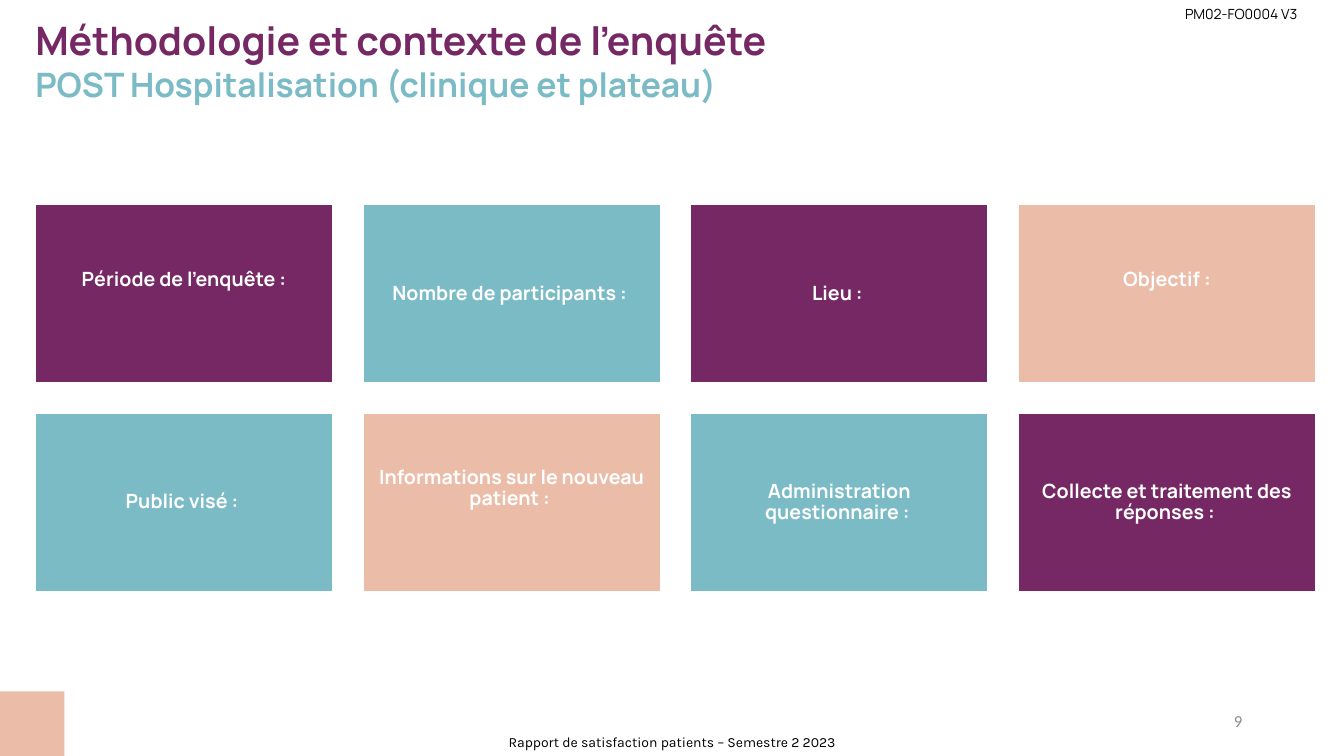
from pptx import Presentation
from pptx.dml.color import RGBColor
from pptx.enum.shapes import MSO_SHAPE
from pptx.enum.text import MSO_ANCHOR, PP_ALIGN
from pptx.util import Inches, Pt

RECT = MSO_SHAPE.RECTANGLE
TOP, MIDDLE = MSO_ANCHOR.TOP, MSO_ANCHOR.MIDDLE
LEFT, CENTER, RIGHT = PP_ALIGN.LEFT, PP_ALIGN.CENTER, PP_ALIGN.RIGHT

PURPLE, TEAL, PEACH = "752864", "7BBBC6", "EBBDA9"
WHITE, BLACK, GREY = "FFFFFF", "000000", "8C8C8C"

CARD_W, CARD_H, GAP = 2.95, 1.77, 0.3
CARDS_LEFT, CARDS_TOP, COLUMNS = 0.35, 2.03, 4
CARD_INSET, RAISED_INSET = 0.06, 0.34

CARDS = [
    ("Période de l’enquête :", PURPLE, True),
    ("Nombre de participants : ", TEAL, False),
    ("Lieu : ", PURPLE, False),
    ("Objectif :", PEACH, True),
    ("Public visé : ", TEAL, False),
    ("Informations sur le nouveau patient : ", PEACH, True),
    ("Administration questionnaire : ", TEAL, False),
    ("Collecte et traitement des réponses : ", PURPLE, False),
]


def color(value):
    return RGBColor.from_string(value)


def set_insets(tf, left, top, right, bottom):
    tf.margin_left, tf.margin_top = Inches(left), Inches(top)
    tf.margin_right, tf.margin_bottom = Inches(right), Inches(bottom)


def add_run(p, text, size, font, fill, bold=False):
    r = p.add_run()
    r.text = text
    r.font.size = Pt(size)
    r.font.name = font
    r.font.bold = bold
    r.font.color.rgb = color(fill)


def add_box(s, x, y, w, h, fill):
    sp = s.shapes.add_shape(RECT, Inches(x), Inches(y), Inches(w), Inches(h))
    sp.shadow.inherit = False
    sp.fill.solid()
    sp.fill.fore_color.rgb = color(fill)
    sp.line.fill.background()
    return sp


def add_text(s, x, y, w, h, align, anchor=TOP):
    sp = s.shapes.add_textbox(Inches(x), Inches(y), Inches(w), Inches(h))
    tf = sp.text_frame
    tf.word_wrap = True
    tf.vertical_anchor = anchor
    tf.paragraphs[0].alignment = align
    return tf


def add_title(s):
    tf = add_text(s, 0.35, 0.16, 12.69, 0.88, LEFT, MIDDLE)
    set_insets(tf, 0, 0, 0, 0)
    add_run(tf.paragraphs[0], "Méthodologie et contexte de l’enquête", 28, "Manrope", PURPLE, True)
    add_run(tf.add_paragraph(), "POST Hospitalisation (clinique et plateau)", 24, "Manrope", TEAL, True)


def add_card(s, index, text, fill, raised):
    row, column = divmod(index, COLUMNS)
    x = CARDS_LEFT + column * (CARD_W + GAP)
    y = CARDS_TOP + row * (CARD_H + GAP)
    sp = add_box(s, x, y, CARD_W, CARD_H, fill)
    sp.line.color.rgb = color(WHITE)
    sp.line.width = Pt(1)
    tf = sp.text_frame
    tf.word_wrap = True
    tf.vertical_anchor = MIDDLE
    bottom = RAISED_INSET if raised else CARD_INSET
    set_insets(tf, CARD_INSET, CARD_INSET, CARD_INSET, bottom)
    p = tf.paragraphs[0]
    p.alignment = CENTER
    p.line_spacing = 0.9
    p.space_after = Pt(5)
    add_run(p, text, 14, "Manrope", WHITE, True)


def add_label(s, x, y, w, h, text, size, font, fill, align=CENTER, anchor=TOP):
    tf = add_text(s, x, y, w, h, align, anchor)
    add_run(tf.paragraphs[0], text, size, font, fill)


def main():
    prs = Presentation()
    prs.slide_width, prs.slide_height = Inches(13.33), Inches(7.5)
    s = prs.slides.add_slide(prs.slide_layouts[6])
    add_title(s)
    add_box(s, 0, 6.86, 0.64, 0.64, PEACH)
    for index, (text, fill, raised) in enumerate(CARDS):
        add_card(s, index, text, fill, raised)
    add_label(s, 3.33, 7.23, 6.67, 0.27, "Rapport de satisfaction patients – Semestre 2 2023", 10, "Karla", BLACK)
    add_label(s, 9.42, 6.95, 3, 0.4, "9", 12, "Calibri", GREY, RIGHT, MIDDLE)
    add_label(s, 10.92, 0.01, 2.78, 0.27, "PM02-FO0004 V3", 10, "Manrope", BLACK)
    prs.save("out.pptx")


if __name__ == "__main__":
    main()
